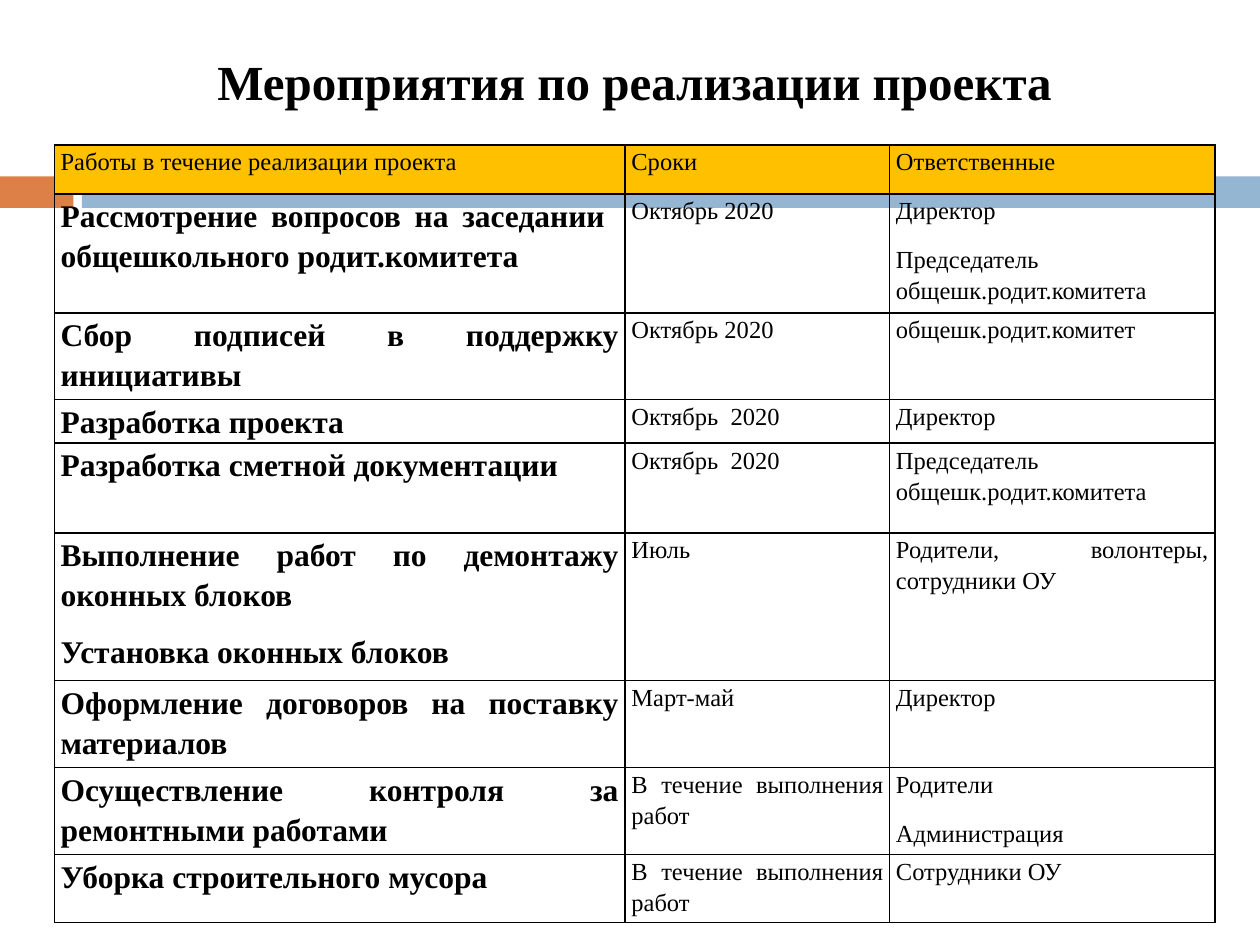
"""Build the slide with the table of project activities."""
from lxml.etree import SubElement
from pptx import Presentation
from pptx.dml.color import RGBColor as RGB
from pptx.enum.shapes import MSO_SHAPE as SHAPE
from pptx.enum.text import MSO_ANCHOR as ANCHOR, PP_ALIGN as ALIGN
from pptx.oxml.ns import qn
from pptx.util import Pt

COLORS = {"orange": "DD8047", "blue": "94B6D2", "header": "FFC000", "text": "000000"}


def write(tf, text, size=14, bold=False, align=ALIGN.JUSTIFY, spacing=1.15, after=10):
    for i, line in enumerate(text.split("\n")):
        p = tf.add_paragraph() if i else tf.paragraphs[0]
        p.alignment, p.line_spacing, p.space_after = align, spacing, Pt(after)
        r = p.add_run()
        r.text = line
        r.font.name, r.font.size, r.font.bold = "Times New Roman", Pt(size), bold
        r.font.color.rgb = RGB.from_string(COLORS["text"])


def add_borders(cell):
    tc_pr = cell._tc.get_or_add_tcPr()
    for i, side in enumerate(("lnL", "lnR", "lnT", "lnB")):
        ln = SubElement(tc_pr, qn(f"a:{side}"), w=str(Pt(1)))
        fill = SubElement(ln, qn("a:solidFill"))
        SubElement(fill, qn("a:srgbClr"), val=COLORS["text"])
        tc_pr.insert(i, ln)


prs = Presentation()
prs.slide_width, prs.slide_height = Pt(720), Pt(540)
s = prs.slides.add_slide(prs.slide_layouts[6])

for left, width, color in ((0, 42, "orange"), (46.8, 673.2, "blue")):
    sp = s.shapes.add_shape(SHAPE.RECTANGLE, Pt(left), Pt(100.8), Pt(width), Pt(18))
    sp.shadow.inherit = False
    sp.fill.solid()
    sp.fill.fore_color.rgb = RGB.from_string(COLORS[color])
    sp.line.fill.background()

tf = s.shapes.add_textbox(Pt(70.6), Pt(25.9), Pt(584), Pt(63.4)).text_frame
tf.word_wrap = True
write(tf, "Мероприятия по реализации проекта", size=28, bold=True,
      align=ALIGN.CENTER, spacing=1, after=0)

rows = [
    (28, "Работы в течение реализации проекта", "Сроки", "Ответственные"),
    (45.4, "Рассмотрение вопросов на заседании  общешкольного родит.комитета",
     "Октябрь 2020", "Директор\nПредседатель общешк.родит.комитета"),
    (28, "Сбор подписей в поддержку инициативы", "Октябрь 2020", "общешк.родит.комитет"),
    (14.4, "Разработка проекта", "Октябрь  2020", "Директор"),
    (51.2, "Разработка сметной документации", "Октябрь  2020",
     "Председатель общешк.родит.комитета"),
    (75.6, "Выполнение работ по демонтажу оконных блоков\nУстановка оконных блоков",
     "Июль", "Родители, волонтеры, сотрудники ОУ"),
    (28, "Оформление договоров на поставку материалов", "Март-май", "Директор"),
    (38.2, "Осуществление контроля за ремонтными работами",
     "В течение выполнения работ", "Родители\nАдминистрация"),
    (28, "Уборка строительного мусора", "В течение выполнения работ", "Сотрудники ОУ"),
]
frame = s.shapes.add_table(len(rows), 3, Pt(31), Pt(82.8), Pt(663.1), Pt(437))
table = frame.table
table.first_row = table.horz_banding = False
for column, width in zip(table.columns, (326.2, 151.2, 185.8)):
    column.width = Pt(width)

for i, (height, *texts) in enumerate(rows):
    table.rows[i].height = Pt(height)
    for j, text in enumerate(texts):
        cell = table.cell(i, j)
        cell.margin_left = cell.margin_right = Pt(3.6)
        cell.margin_top = cell.margin_bottom = 0
        cell.vertical_anchor = ANCHOR.TOP
        if i == 0:
            cell.fill.solid()
            cell.fill.fore_color.rgb = RGB.from_string(COLORS["header"])
        else:
            cell.fill.background()
        add_borders(cell)
        activity = i > 0 and j == 0
        write(cell.text_frame, text, size=18 if activity else 14, bold=activity)
frame.height = Pt(437)

prs.save("out.pptx")
